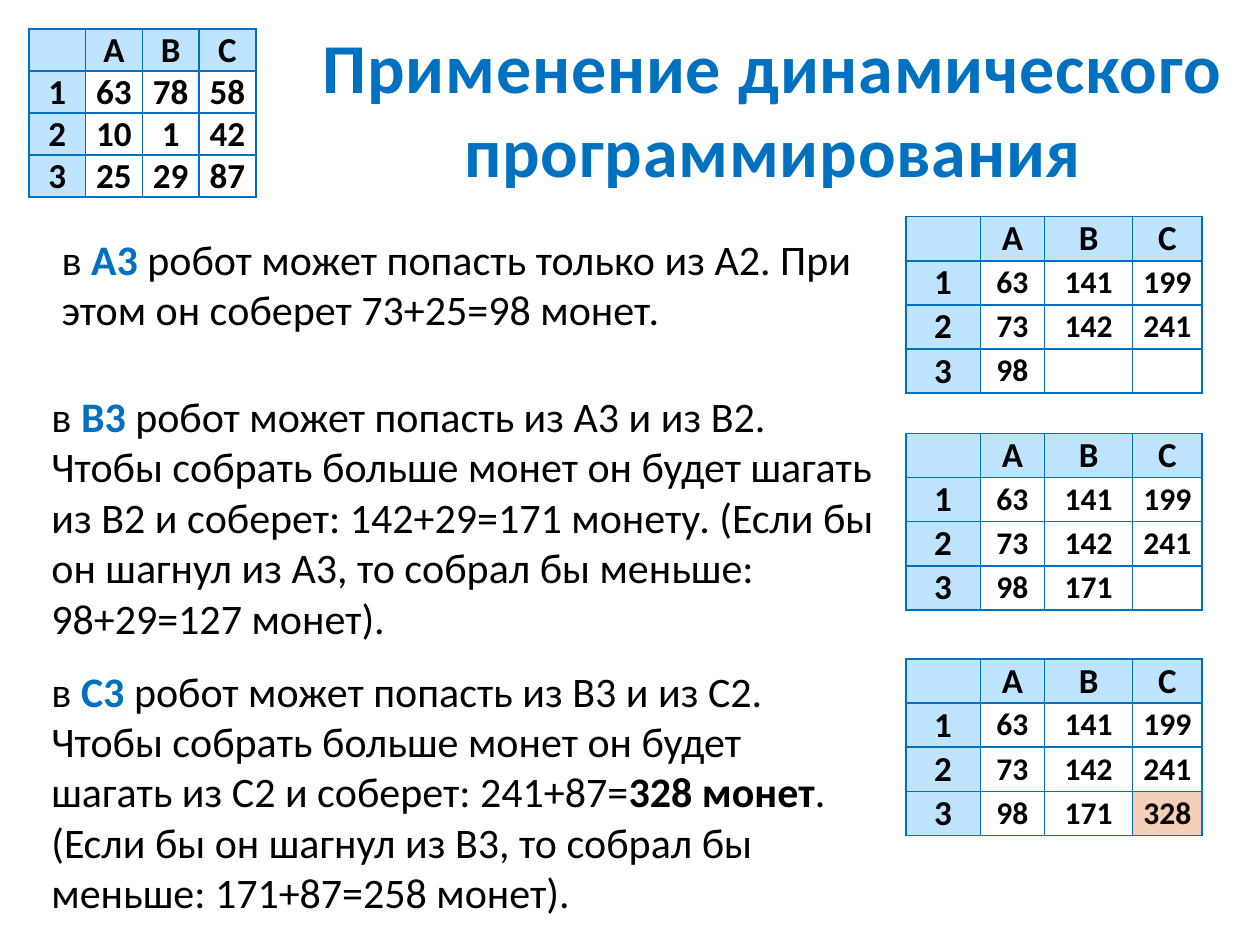
"""Build a slide that steps through a dynamic programming table for a coin-collecting robot."""
from dataclasses import dataclass

from lxml import etree
from pptx import Presentation
from pptx.dml.color import RGBColor
from pptx.enum.text import MSO_ANCHOR, PP_ALIGN
from pptx.oxml.ns import qn
from pptx.slide import Slide
from pptx.util import Inches, Pt

CENTER = PP_ALIGN.CENTER
LEFT = PP_ALIGN.LEFT
MIDDLE = MSO_ANCHOR.MIDDLE
TOP = MSO_ANCHOR.TOP


@dataclass(frozen=True)
class Theme:
    font: str = "Calibri"
    accent: str = "0070C0"
    ink: str = "000000"
    header_fill: str = "BFE4FF"
    answer_fill: str = "F6CFB9"
    title_size: int = 40
    body_size: int = 24
    header_size: int = 20
    sum_size: int = 18
    border_width: int = 1


@dataclass(frozen=True)
class Span:
    text: str
    color: str
    bold: bool = False
    spacing: float = 0


@dataclass(frozen=True)
class Passage:
    left: float
    top: float
    width: float
    height: float
    spans: tuple[Span, ...]
    size: int
    align: PP_ALIGN = LEFT
    anchor: MSO_ANCHOR = TOP


@dataclass(frozen=True)
class CoinGrid:
    left: float
    top: float
    column_widths: tuple[float, ...]
    row_height: float
    values: tuple[tuple[str, ...], ...]
    value_size: int
    answer: str = ""


THEME = Theme()
COLUMN_NAMES = ("A", "B", "C")


def step(left: float, top: float, width: float, height: float,
         cell_name: str, explanation: str, total: str = "", remark: str = "") -> Passage:
    """Describe the explanation of one table cell."""
    spans = [
        Span("в ", THEME.ink),
        Span(f"{cell_name} ", THEME.accent, bold=True),
        Span(explanation, THEME.ink),
    ]
    if total:
        spans += [Span(total, THEME.ink, bold=True), Span(remark, THEME.ink)]
    return Passage(left, top, width, height, tuple(spans), THEME.body_size)


def sums_grid(top: float, last_row: tuple[str, ...], answer: str = "") -> CoinGrid:
    """Describe one state of the table of collected sums."""
    values = (("63", "141", "199"), ("73", "142", "241"), last_row)
    return CoinGrid(7.19, top, (0.59, 0.51, 0.7, 0.55), 0.35, values, THEME.sum_size, answer)


PASSAGES = (
    Passage(2.27, 0.23, 7.73, 1.25,
            (Span("Применение динамического программирования", THEME.accent, True, 0.5),),
            THEME.title_size, CENTER, MIDDLE),
    step(0.39, 1.8, 6.64, 1.25, "A3",
         "робот может попасть только из A2. При этом он соберет 73+25=98 монет."),
    step(0.31, 3.05, 6.8, 2.11, "B3",
         "робот может попасть из A3 и из B2. Чтобы собрать больше монет он будет шагать "
         "из B2 и соберет: 142+29=171 монету. (Если бы он шагнул из A3, то собрал бы "
         "меньше: 98+29=127 монет)."),
    step(0.31, 5.23, 6.64, 2.03, "C3",
         "робот может попасть из B3 и из C2. Чтобы собрать больше монет он будет шагать "
         "из C2 и соберет: 241+87=",
         "328 монет", ". (Если бы он шагнул из B3, то собрал бы меньше: 171+87=258 монет)."),
)

GRIDS = (
    CoinGrid(0.23, 0.23, (0.45,) * 4, 0.33,
             (("63", "78", "58"), ("10", "1", "42"), ("25", "29", "87")), THEME.header_size),
    sums_grid(1.72, ("98", "", "")),
    sums_grid(3.44, ("98", "171", "")),
    sums_grid(5.23, ("98", "171", "328"), answer="328"),
)


def add_span(paragraph, span: Span, size: int) -> None:
    """Append one formatted run."""
    run = paragraph.add_run()
    run.text = span.text
    font = run.font
    font.name = THEME.font
    font.size = Pt(size)
    font.bold = span.bold
    font.color.rgb = RGBColor.from_string(span.color)
    if span.spacing:
        font._element.set("spc", str(round(span.spacing * 100)))


def add_passage(slide: Slide, passage: Passage) -> None:
    """Draw one wrapped text box."""
    box = slide.shapes.add_textbox(Inches(passage.left), Inches(passage.top),
                                   Inches(passage.width), Inches(passage.height))
    frame = box.text_frame
    frame.word_wrap = True
    frame.vertical_anchor = passage.anchor
    paragraph = frame.paragraphs[0]
    paragraph.alignment = passage.align
    for span in passage.spans:
        add_span(paragraph, span, passage.size)


def add_borders(cell) -> None:
    """Outline all four sides of a cell."""
    properties = cell._tc.get_or_add_tcPr()
    for side in ("lnL", "lnR", "lnT", "lnB"):
        line = etree.SubElement(properties, qn(f"a:{side}"), w=str(Pt(THEME.border_width)))
        fill = etree.SubElement(line, qn("a:solidFill"))
        etree.SubElement(fill, qn("a:srgbClr"), val=THEME.accent)


def fill_cell(cell, text: str, size: int, color: str) -> None:
    """Format one table cell, with no fill when the colour is empty."""
    cell.margin_left = cell.margin_right = Inches(0.07)
    cell.margin_top = cell.margin_bottom = 0
    cell.vertical_anchor = MIDDLE
    add_borders(cell)
    if color:
        cell.fill.solid()
        cell.fill.fore_color.rgb = RGBColor.from_string(color)
    else:
        cell.fill.background()
    if text:
        paragraph = cell.text_frame.paragraphs[0]
        paragraph.alignment = CENTER
        add_span(paragraph, Span(text, THEME.ink, bold=True), size)


def add_grid(slide: Slide, grid: CoinGrid) -> None:
    """Draw a table with lettered columns and numbered rows."""
    rows = [("", *COLUMN_NAMES)]
    rows += [(str(number), *values) for number, values in enumerate(grid.values, 1)]
    table = slide.shapes.add_table(
        len(rows), len(grid.column_widths), Inches(grid.left), Inches(grid.top),
        Inches(sum(grid.column_widths)), Inches(grid.row_height * len(rows))).table
    table.first_row = table.horz_banding = False
    for column, width in zip(table.columns, grid.column_widths):
        column.width = Inches(width)
    for row_index, texts in enumerate(rows):
        table.rows[row_index].height = Inches(grid.row_height)
        for column_index, text in enumerate(texts):
            is_header = row_index == 0 or column_index == 0
            is_answer = bool(text) and text == grid.answer
            color = THEME.header_fill if is_header else THEME.answer_fill if is_answer else ""
            size = THEME.header_size if is_header else grid.value_size
            fill_cell(table.cell(row_index, column_index), text, size, color)


def main() -> None:
    """Build and save the presentation."""
    presentation = Presentation()
    presentation.slide_width = Inches(10)
    presentation.slide_height = Inches(7.5)
    slide = presentation.slides.add_slide(presentation.slide_layouts[6])
    for passage in PASSAGES:
        add_passage(slide, passage)
    for grid in GRIDS:
        add_grid(slide, grid)
    presentation.save("out.pptx")


if __name__ == "__main__":
    main()
